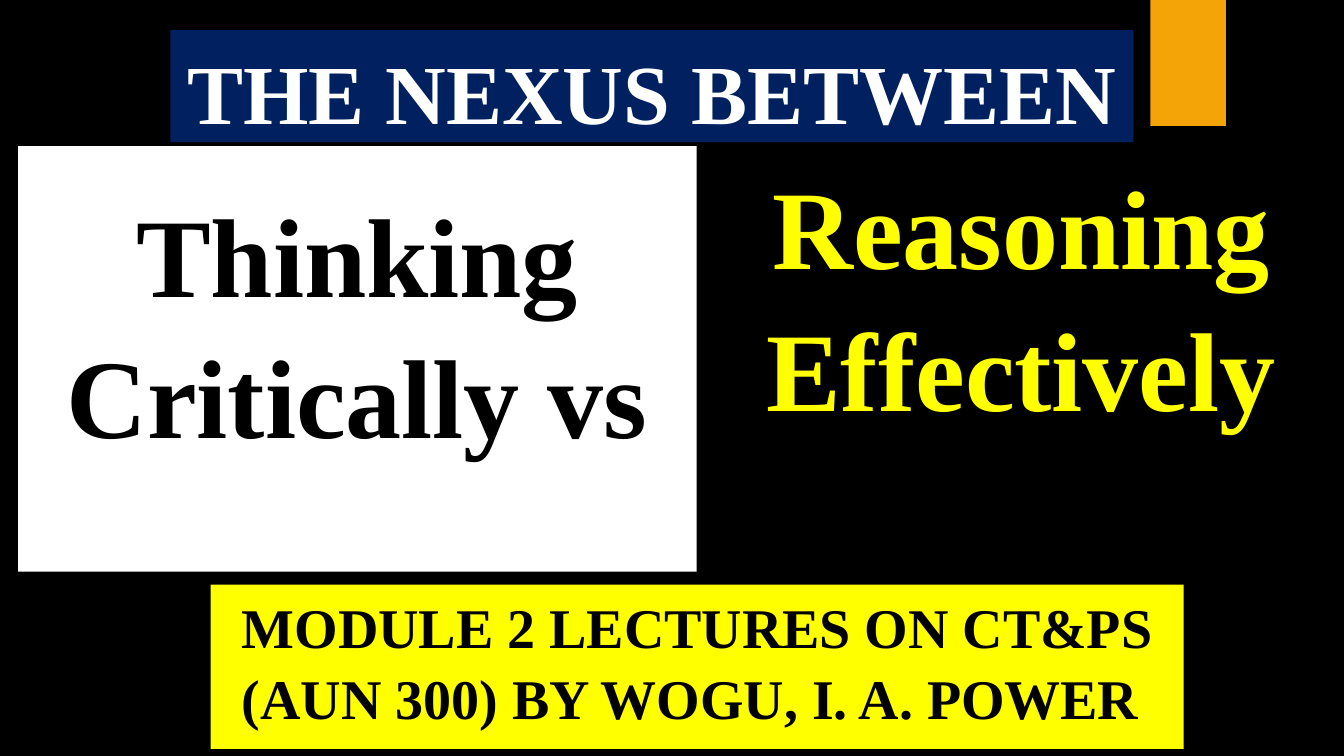
from pptx import Presentation
from pptx.dml.color import RGBColor
from pptx.enum.shapes import MSO_SHAPE
from pptx.enum.text import MSO_ANCHOR, PP_ALIGN
from pptx.util import Inches, Pt

RECTANGLE = MSO_SHAPE.RECTANGLE
TOP, BOTTOM = MSO_ANCHOR.TOP, MSO_ANCHOR.BOTTOM
CENTER = PP_ALIGN.CENTER

THEME = {
    "font": "Times New Roman",
    "line_spacing": 1.05,
    "black": "000000",
    "white": "FFFFFF",
    "yellow": "FFFF00",
    "navy": "002060",
    "orange": "F5A408",
    "heading": 60,
    "topic": 80,
    "module": 40,
}

# Content: left, top, width, height in inches
ACCENT_BAR = (11.41, 0, 0.75, 1.25)
TOPIC_TOP, TOPIC_HEIGHT = 1.45, 4.22
PANELS = [
    {"text": "Thinking Critically vs", "at": (0.18, TOPIC_TOP, 6.73, TOPIC_HEIGHT),
     "fill": "white", "color": "black", "size": "topic",
     "anchor": BOTTOM, "bottom_inset": 1.1},
    {"text": "MODULE 2 LECTURES ON CT&PS (AUN 300) BY WOGU, I. A. POWER ",
     "at": (2.09, 5.8, 9.65, 1.63),
     "fill": "yellow", "color": "black", "size": "module",
     "anchor": TOP, "bottom_inset": 0.05},
    {"text": "Reasoning Effectively", "at": (7.02, TOPIC_TOP, 6.22, TOPIC_HEIGHT),
     "fill": "black", "color": "yellow", "size": "topic",
     "anchor": BOTTOM, "bottom_inset": 1.37},
    {"text": "THE NEXUS BETWEEN", "at": (1.69, 0.3, 9.55, 1.11),
     "fill": "navy", "color": "white", "size": "heading",
     "anchor": TOP, "bottom_inset": 0.05},
]


def color(name):
    return RGBColor.from_string(THEME[name])


def add_block(page, at, fill):
    block = page.shapes.add_shape(RECTANGLE, *map(Inches, at))
    block.shadow.inherit = False
    block.fill.solid()
    block.fill.fore_color.rgb = color(fill)
    block.line.fill.background()
    return block


def add_panel(page, panel):
    box = add_block(page, panel["at"], panel["fill"])
    frame = box.text_frame
    frame.word_wrap = True
    frame.vertical_anchor = panel["anchor"]
    frame.margin_bottom = Inches(panel["bottom_inset"])
    para = frame.paragraphs[0]
    para.alignment = CENTER
    para.line_spacing = THEME["line_spacing"]
    span = para.add_run()
    span.text = panel["text"]
    span.font.name = THEME["font"]
    span.font.size = Pt(THEME[panel["size"]])
    span.font.bold = True
    span.font.color.rgb = color(panel["color"])


def main():
    deck = Presentation()
    deck.slide_width, deck.slide_height = Inches(13.33), Inches(7.5)
    page = deck.slides.add_slide(deck.slide_layouts[6])

    # Background and accent bar
    page.background.fill.solid()
    page.background.fill.fore_color.rgb = color("black")
    add_block(page, ACCENT_BAR, "orange")

    # Text panels
    for panel in PANELS:
        add_panel(page, panel)

    deck.save("out.pptx")


if __name__ == "__main__":
    main()
